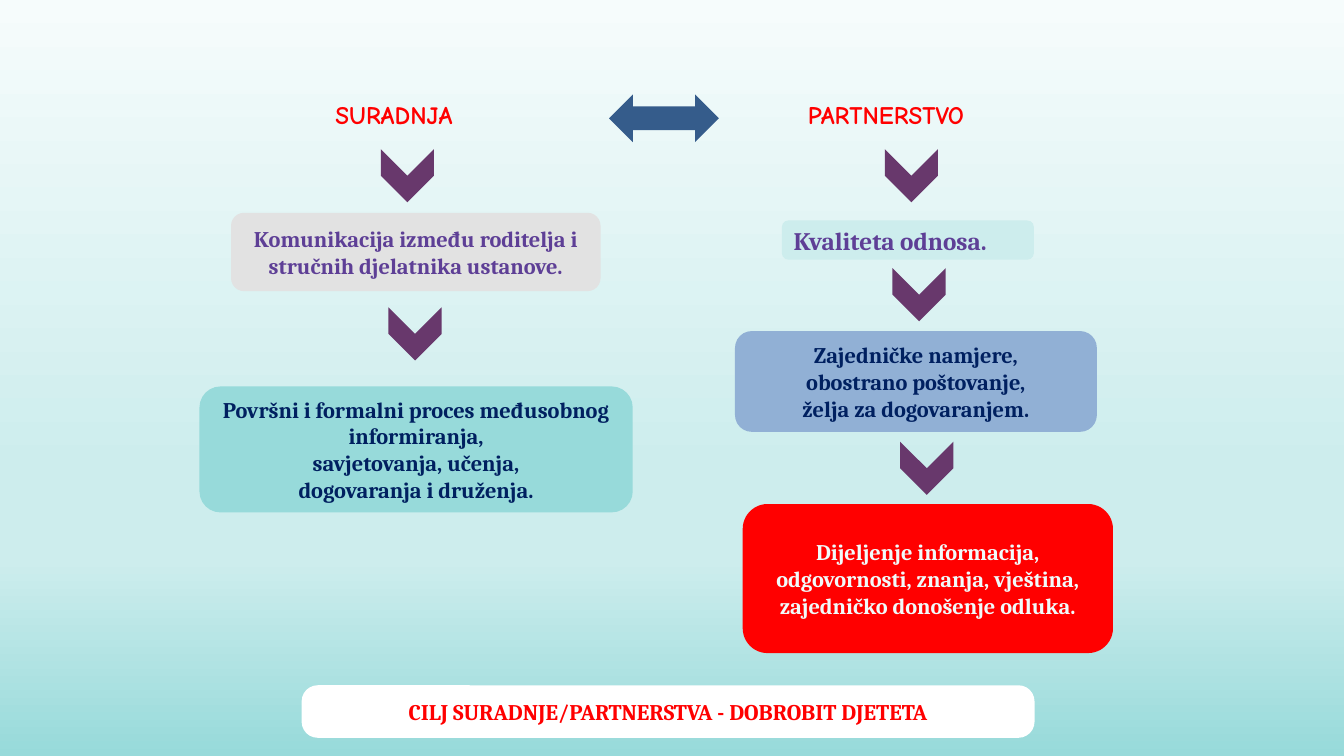
from lxml.etree import SubElement
from pptx import Presentation
from pptx.dml.color import RGBColor
from pptx.enum.shapes import MSO_SHAPE as SHAPE
from pptx.enum.text import MSO_ANCHOR as ANCHOR, PP_ALIGN as ALIGN
from pptx.oxml.ns import qn
from pptx.util import Pt

RED = RGBColor(0xFF, 0x00, 0x00)
WHITE = RGBColor(0xFF, 0xFF, 0xFF)
ICE = RGBColor(0xF1, 0xFA, 0xFA)
FROST = RGBColor(0xF6, 0xFC, 0xFC)
MINT = RGBColor(0xCD, 0xED, 0xED)
AQUA = RGBColor(0x97, 0xDA, 0xDA)
GRAY = RGBColor(0xE2, 0xE2, 0xE2)
SKY = RGBColor(0x91, 0xB0, 0xD5)
NAVY = RGBColor(0x00, 0x20, 0x60)
VIOLET = RGBColor(0x5E, 0x3F, 0x96)
PLUM = RGBColor(0x68, 0x38, 0x6C)
STEEL = RGBColor(0x35, 0x5C, 0x8B)

BACKGROUND = [(0, FROST), (62, MINT), (74, MINT), (100, AQUA)]
HEADINGS = [
    ("SURADNJA", (232.5, 67.5, 118, 29)),
    ("PARTNERSTVO", (570, 67.5, 168.5, 29)),
]
BOXES = [
    (["Komunikacija između roditelja i stručnih djelatnika ustanove."],
     (165, 152, 264, 56), GRAY, VIOLET, 16, ALIGN.CENTER),
    (["Površni i formalni proces međusobnog informiranja,",
      "savjetovanja, učenja,",
      "dogovaranja i druženja."],
     (142.5, 276, 309.5, 90), AQUA, NAVY, 16, ALIGN.CENTER),
    (["Kvaliteta odnosa."],
     (558.5, 157.5, 180, 28), MINT, VIOLET, 18, ALIGN.LEFT),
    (["Zajedničke namjere,", "obostrano poštovanje,", "želja za dogovaranjem."],
     (525, 236.5, 258.5, 72), SKY, NAVY, 16, ALIGN.CENTER),
    (["Dijeljenje informacija,",
      "odgovornosti, znanja, vještina, zajedničko donošenje odluka."],
     (530.5, 360, 264.5, 106.5), RED, ICE, 16, ALIGN.CENTER),
    (["CILJ SURADNJE/PARTNERSTVA - DOBROBIT DJETETA"],
     (215.5, 489.5, 523.5, 37.5), WHITE, RED, 16, ALIGN.CENTER),
]
GOAL_ROUNDING = 0.305
CHEVRON_SIZE = 38
CHEVRONS = [(272, 106.5), (277.5, 219.5), (632, 106.5), (637.5, 191.5), (643, 315.5)]
DOUBLE_ARROW = (435, 67.5, 78.5, 34)


def add_filled(s, kind, box, color):
    sp = s.shapes.add_shape(kind, *map(Pt, box))
    sp.shadow.inherit = False
    sp.fill.solid()
    sp.fill.fore_color.rgb = color
    sp.line.fill.background()
    return sp


def write(sp, lines, font, size, color, align):
    tf = sp.text_frame
    tf.word_wrap = True
    tf.text = "\n".join(lines)
    for p in tf.paragraphs:
        p.alignment = align
        for r in p.runs:
            for name, value in {"name": font, "size": Pt(size), "bold": True}.items():
                setattr(r.font, name, value)
            r.font.color.rgb = color


def paint_background(s):
    fill = s.background.fill
    fill.gradient()
    fill.gradient_angle = 270
    stops = next(s.element.iter(qn("a:gsLst")))
    stops.clear()
    for percent, color in BACKGROUND:
        stop = SubElement(stops, qn("a:gs"), pos=str(percent * 1000))
        SubElement(stop, qn("a:srgbClr"), val=str(color))


def main():
    prs = Presentation()
    prs.slide_width, prs.slide_height = Pt(960), Pt(540)
    s = prs.slides.add_slide(prs.slide_layouts[6])
    paint_background(s)

    for text, box in HEADINGS:
        sp = s.shapes.add_textbox(*map(Pt, box))
        write(sp, [text], "Comic Neue", 18, RED, ALIGN.LEFT)

    for lines, box, fill, color, size, align in BOXES:
        sp = add_filled(s, SHAPE.ROUNDED_RECTANGLE, box, fill)
        sp.text_frame.vertical_anchor = ANCHOR.MIDDLE
        write(sp, lines, "Cambria", size, color, align)
    sp.adjustments[0] = GOAL_ROUNDING

    for left, top in CHEVRONS:
        sp = add_filled(s, SHAPE.CHEVRON, (left, top, CHEVRON_SIZE, CHEVRON_SIZE), PLUM)
        sp.rotation = 90
    add_filled(s, SHAPE.LEFT_RIGHT_ARROW, DOUBLE_ARROW, STEEL)

    prs.save("out.pptx")


if __name__ == "__main__":
    main()
